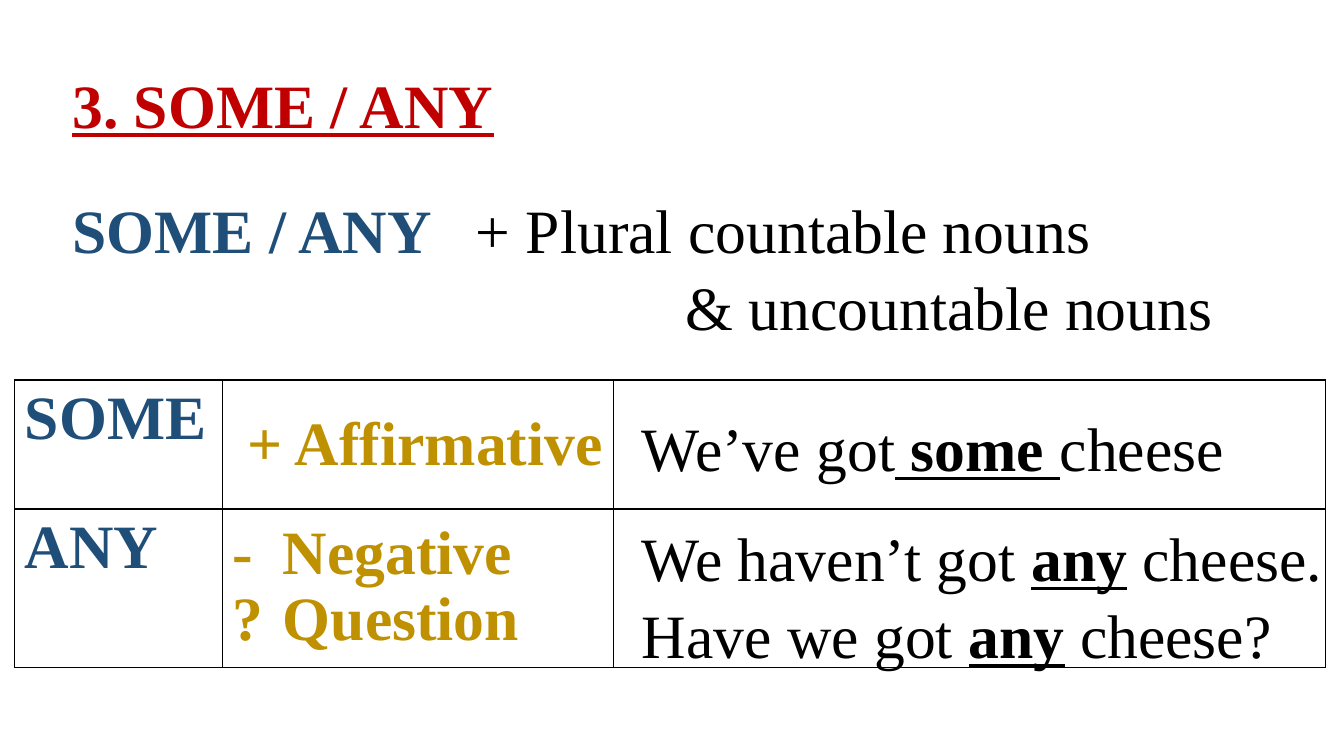
from pptx import Presentation
from pptx.dml.color import RGBColor
from pptx.enum import text
from pptx.oxml.ns import qn
from pptx.util import Pt
from lxml import etree

FONT, SIZE = "Times New Roman", 44
COLORS = {"red": "C00000", "blue": "1F4E79", "gold": "BF9000", "black": "000000"}

# Content: a run is (text, colour, style), with b = bold and u = underlined;
# a paragraph is (left indent, tab stops, runs)
TITLE = [(0, [], [("3. SOME / ANY", "red", "bu")])]
RULE = [
    (0, [332, 434], [("SOME / ANY", "blue", "b"),
                     ("\t+\tPlural countable nouns", "black", "")]),
    (438, [], [("& uncountable nouns", "black", "")]),
]
SOME_EXAMPLE = [(0, [], [("We’ve got", "black", ""), (" some ", "black", "bu"),
                         ("cheese", "black", "")])]
ANY_EXAMPLES = [
    (0, [], [(start, "black", ""), ("any", "black", "bu"), (end, "black", "")])
    for start, end in [("We haven’t got ", " cheese."), ("Have we got ", " cheese?")]
]
USES = [
    [[(0, [], [("SOME", "blue", "b")])],
     [(11, [], [("+ Affirmative", "gold", "b")])]],
    [[(0, [], [("ANY", "blue", "b")])],
     [(0, [58.5], [("-\tNegative", "gold", "b")]),
      (0, [54], [("?\tQuestion", "gold", "b")])]],
]

# Places in points: left, top, width, height, wrap
TEXTS = [
    (TITLE, 44.6, 39.6, 395, 60.5, True),
    (RULE, 44.6, 128.9, 902, 113.8, True),
    (SOME_EXAMPLE, 451.4, 285.1, 434, 60.5, False),
    (ANY_EXAMPLES, 451.4, 363.6, 508, 113.8, True),
]
TABLE_LEFT, TABLE_TOP = 10.6, 271.4
COLUMNS = [148.3, 279.4, 508.3]
ROWS = [92.2, 113]


def write(frame, paragraphs, spacing=1.0, gap=0):
    for i, (indent, stops, runs) in enumerate(paragraphs):
        para = frame.paragraphs[0] if i == 0 else frame.add_paragraph()
        para.line_spacing = spacing
        para.space_before = Pt(gap if i else 0)
        props = para._p.get_or_add_pPr()
        props.set("marL", str(Pt(indent)))
        props.set("indent", "0")
        if stops:
            tabs = etree.SubElement(props, qn("a:tabLst"))
            for stop in stops:
                etree.SubElement(tabs, qn("a:tab"), pos=str(Pt(stop)), algn="l")
        for words, color, style in runs:
            run = para.add_run()
            run.text = words
            run.font.name, run.font.size = FONT, Pt(SIZE)
            run.font.bold, run.font.underline = "b" in style, "u" in style
            run.font.color.rgb = RGBColor.from_string(COLORS[color])


def outline(cell):
    props = cell._tc.get_or_add_tcPr()
    for i, side in enumerate(("a:lnL", "a:lnR", "a:lnT", "a:lnB")):
        line = etree.Element(qn(side), w=str(Pt(1)))
        fill = etree.SubElement(line, qn("a:solidFill"))
        etree.SubElement(fill, qn("a:srgbClr"), val=COLORS["black"])
        props.insert(i, line)


prs = Presentation()
prs.slide_width, prs.slide_height = Pt(960), Pt(540)
slide = prs.slides.add_slide(prs.slide_layouts[6])

# Table of uses; the examples lie over its last column
uses = slide.shapes.add_table(len(ROWS), len(COLUMNS), Pt(TABLE_LEFT), Pt(TABLE_TOP),
                              Pt(sum(COLUMNS)), Pt(sum(ROWS))).table
uses.first_row = uses.horz_banding = False
for column, width in zip(uses.columns, COLUMNS):
    column.width = Pt(width)
for r, height in enumerate(ROWS):
    uses.rows[r].height = Pt(height)
    for c in range(len(COLUMNS)):
        cell = uses.cell(r, c)
        cell.fill.background()
        outline(cell)
        if c < len(USES[r]):
            cell.margin_right = 0
            write(cell.text_frame, USES[r][c], 0.96 if len(USES[r][c]) > 1 else 1.0)
        if c == 1:
            cell.vertical_anchor = text.MSO_ANCHOR.MIDDLE

# Title, rule and examples
for paragraphs, left, top, width, height, wrap in TEXTS:
    frame = slide.shapes.add_textbox(Pt(left), Pt(top), Pt(width), Pt(height)).text_frame
    frame.word_wrap = wrap
    frame.margin_top, frame.margin_bottom = Pt(8), 0
    write(frame, paragraphs, gap=2.3)

prs.save("out.pptx")
